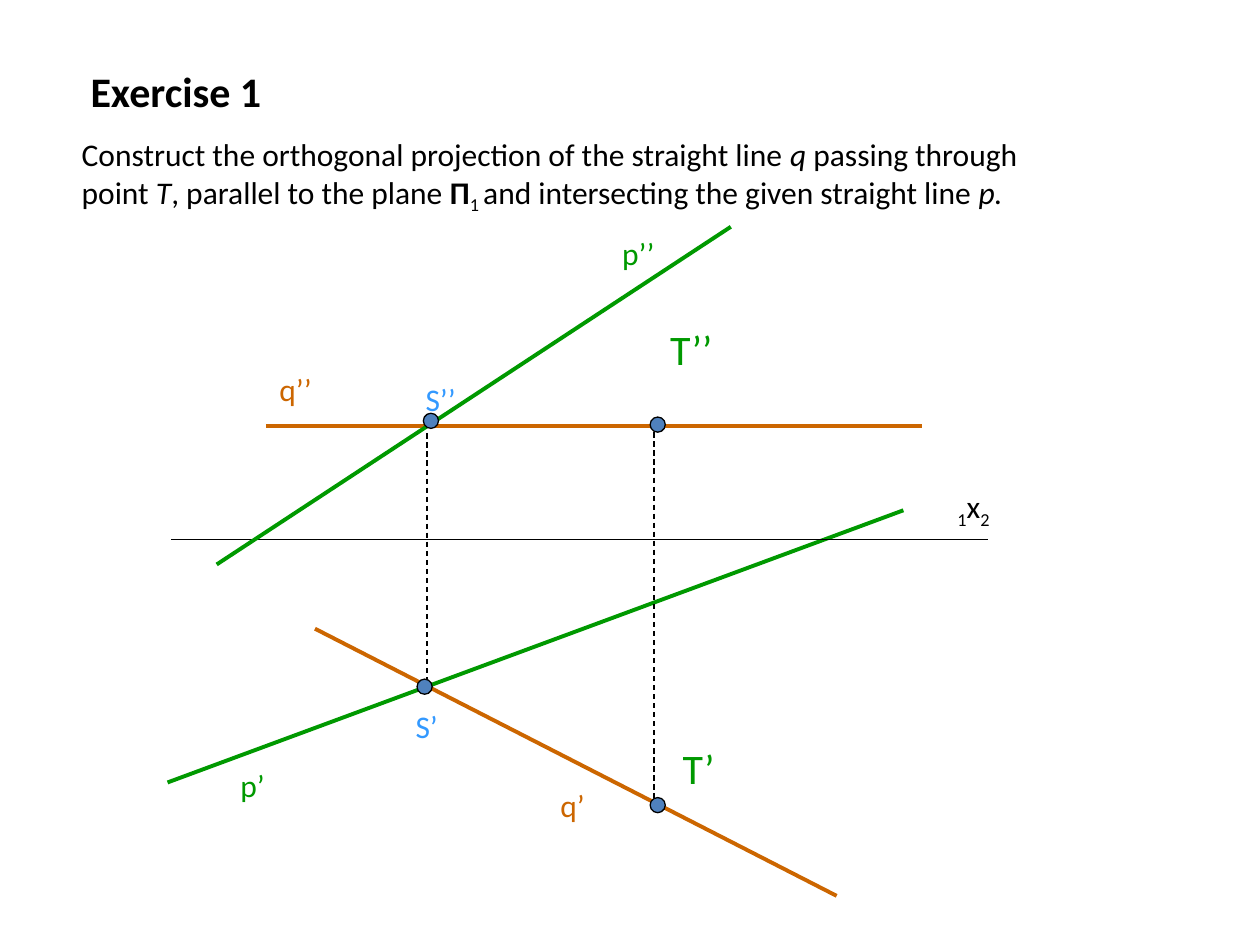
from dataclasses import dataclass
from typing import NamedTuple

from lxml import etree
from pptx import Presentation, util as u
from pptx.dml.color import RGBColor
from pptx.enum import dml, shapes, text
from pptx.oxml.ns import qn


@dataclass(frozen=True)
class Theme:
    font: str = "Calibri"
    ink: str = "000000"
    given: str = "009900"
    solution: str = "CC6600"
    intersection: str = "3399FF"
    dot: str = "4F81BD"
    body_size: int = 18
    large_size: int = 24
    thin: float = 0.75
    thick: float = 2.25


THEME = Theme()
COLUMNS, ROWS = 100, 75
DOT_SIZE = 1.2


class Piece(NamedTuple):
    words: str
    bold: bool = False
    italic: bool = False
    subscript: bool = False


class Label(NamedTuple):
    pieces: list[Piece]
    column: float
    row: float
    columns: float
    rows: float
    color: str = THEME.ink
    size: int = THEME.body_size
    grows: bool = True


class Segment(NamedTuple):
    start: tuple[float, float]
    end: tuple[float, float]
    color: str = THEME.ink
    width: float = THEME.thin
    dashed: bool = False


STATEMENT = [
    Piece("Construct the orthogonal projection of the straight line "),
    Piece("q ", italic=True),
    Piece("passing through point "),
    Piece("T", italic=True),
    Piece(", parallel to the plane "),
    Piece("Π", bold=True),
    Piece("1 ", subscript=True),
    Piece("and intersecting the given straight line "),
    Piece("p.", italic=True),
]
AXIS_NAME = [Piece("1", subscript=True), Piece("x"), Piece("2", subscript=True)]

SEGMENTS = [
    Segment((21.1, 33.8), (73.2, 33.8), THEME.solution, THEME.thick),
    Segment((25, 49.9), (66.4, 71.1), THEME.solution, THEME.thick),
    Segment((71.7, 40.5), (13.3, 62.1), THEME.given, THEME.thick),
    Segment((13.6, 42.8), (78.4, 42.8)),
    Segment((58, 18), (17.2, 44.8), THEME.given, THEME.thick),
    Segment((51.9, 33.6), (51.9, 63.3), dashed=True),
    Segment((33.9, 34.4), (33.9, 54), dashed=True),
]
LABELS = [
    Label([Piece("Exercise 1", bold=True)], 6.2, 4.7, 25.9, 5,
          size=THEME.large_size, grows=False),
    Label(STATEMENT, 5.5, 10.2, 77.4, 7.1),
    Label([Piece("q’’")], 21.2, 28.9, 15, 4, THEME.solution),
    Label([Piece("q’")], 43.5, 61.9, 6.7, 6.6, THEME.solution),
    Label([Piece("p’’")], 48.4, 18.1, 7, 4, THEME.given),
    Label([Piece("p’")], 18.1, 60.3, 11.3, 6.4, THEME.given),
    Label([Piece("T’’")], 52.2, 25.2, 6.2, 6.5, THEME.given, THEME.large_size),
    Label([Piece("T’")], 53.2, 58.4, 6.9, 6.5, THEME.given, THEME.large_size),
    Label([Piece("S’’")], 32.8, 29.7, 5.9, 4, THEME.intersection),
    Label([Piece("S’")], 32, 55.6, 6.2, 5, THEME.intersection),
    Label(AXIS_NAME, 75, 38.2, 7.1, 4),
]
DOTS = [(33.6, 32.8), (33.1, 53.9), (51.6, 33.1), (51.6, 63.3)]

deck = Presentation()
deck.slide_width, deck.slide_height = u.Inches(10), u.Inches(7.5)
slide = deck.slides.add_slide(deck.slide_layouts[6])


def x(columns: float) -> int:
    return round(deck.slide_width * columns / COLUMNS)


def y(rows: float) -> int:
    return round(deck.slide_height * rows / ROWS)


def draw_segment(segment: Segment) -> None:
    line = slide.shapes.add_connector(
        shapes.MSO_CONNECTOR.STRAIGHT,
        x(segment.start[0]), y(segment.start[1]),
        x(segment.end[0]), y(segment.end[1]))
    line.line.color.rgb = RGBColor.from_string(segment.color)
    line.line.width = u.Pt(segment.width)
    if segment.dashed:
        line.line.dash_style = dml.MSO_LINE.DASH
    etree.SubElement(line._element.spPr, qn("a:effectLst"))


def draw_label(label: Label) -> None:
    box = slide.shapes.add_textbox(
        x(label.column), y(label.row), x(label.columns), y(label.rows))
    frame = box.text_frame
    frame.word_wrap = True
    if label.grows:
        frame.auto_size = text.MSO_AUTO_SIZE.SHAPE_TO_FIT_TEXT
    for piece in label.pieces:
        run = frame.paragraphs[0].add_run()
        run.text = piece.words
        run.font.name = THEME.font
        run.font.size = u.Pt(label.size)
        run.font.color.rgb = RGBColor.from_string(label.color)
        run.font.bold, run.font.italic = piece.bold, piece.italic
        if piece.subscript:
            run._r.get_or_add_rPr().set("baseline", "-25000")


def draw_dot(column: float, row: float) -> None:
    dot = slide.shapes.add_shape(
        shapes.MSO_SHAPE.OVAL, x(column), y(row), x(DOT_SIZE), y(DOT_SIZE))
    dot.shadow.inherit = False
    dot.fill.solid()
    dot.fill.fore_color.rgb = RGBColor.from_string(THEME.dot)
    dot.line.color.rgb = RGBColor.from_string(THEME.ink)
    dot.line.width = u.Pt(THEME.thin)


def main() -> None:
    for segment in SEGMENTS:
        draw_segment(segment)
    for label in LABELS:
        draw_label(label)
    for column, row in DOTS:
        draw_dot(column, row)
    deck.save("out.pptx")


if __name__ == "__main__":
    main()
